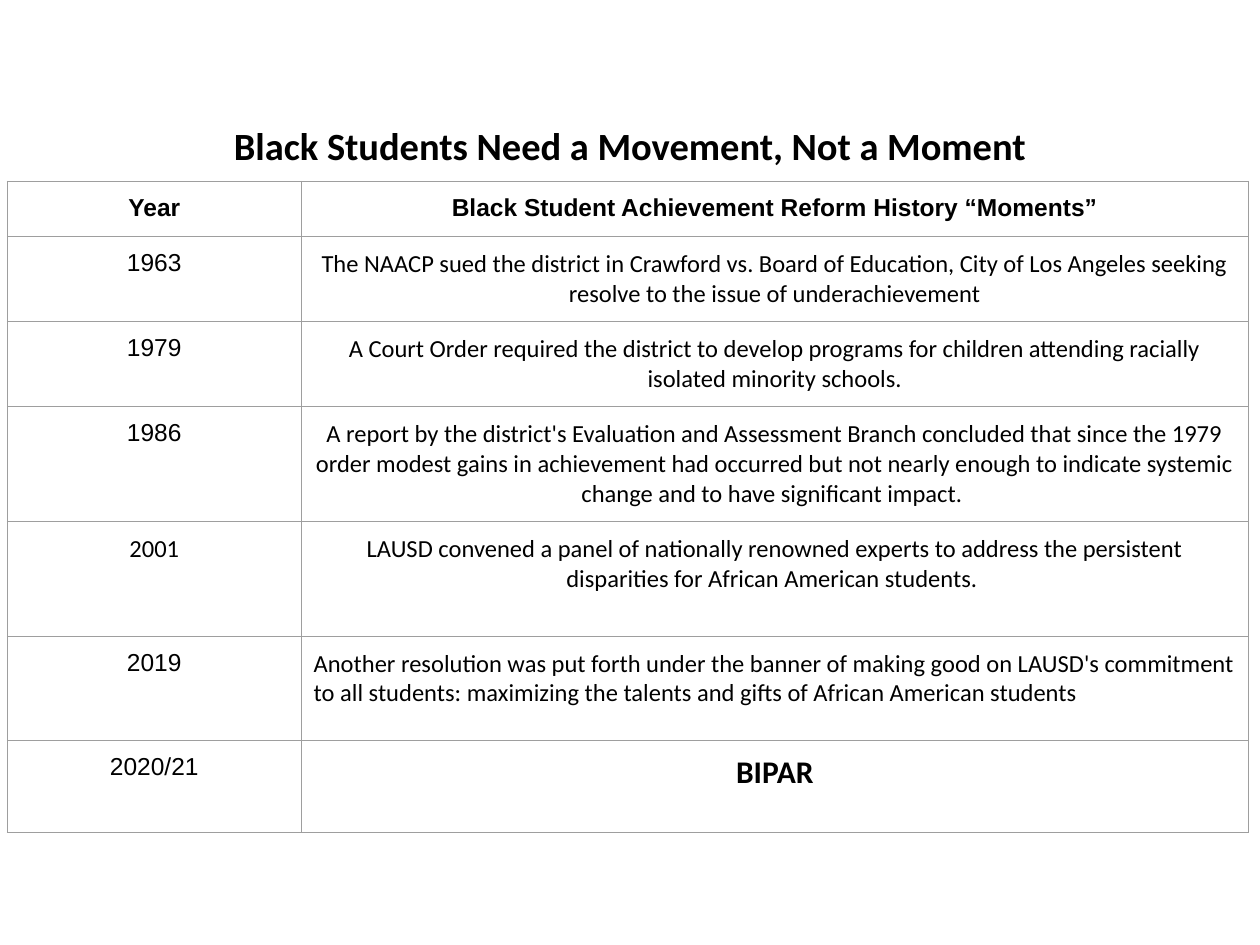
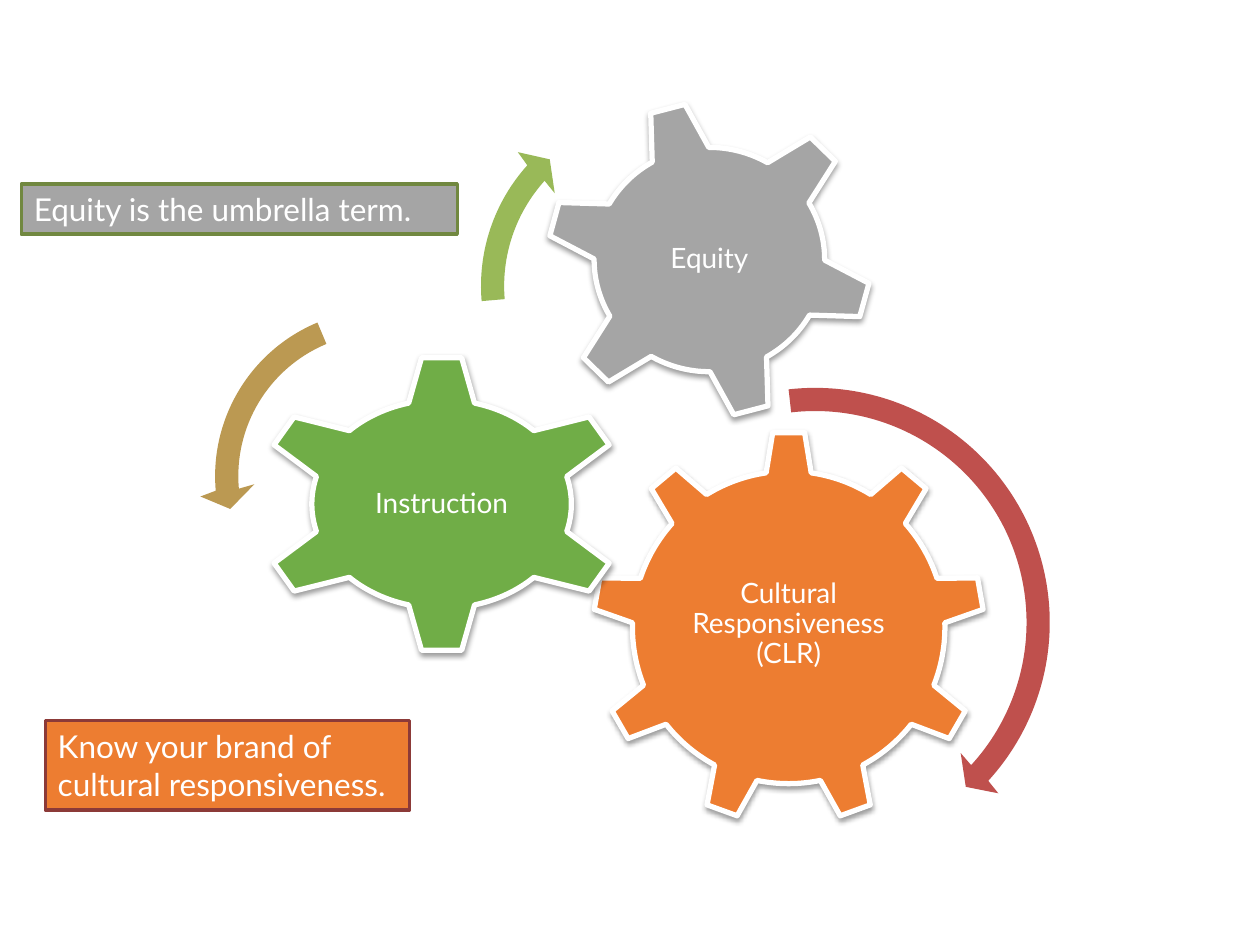
"""Build two slides: a table of reform moments and three linked gears."""
from math import cos, radians, sin, tan
from lxml.etree import SubElement as Sub
from pptx import Presentation as Deck
from pptx.dml.color import RGBColor as Rgb
from pptx.enum.shapes import MSO_SHAPE as Kind
from pptx.enum.text import MSO_ANCHOR as Anchor, PP_ALIGN as Align
from pptx.oxml.ns import qn
from pptx.util import Inches, Pt

HUES = {
    "black": "000000", "white": "FFFFFF", "rule": "9E9E9E", "gray": "A5A5A5",
    "orange": "ED7D31", "green": "70AD47", "red": "BF504D", "tan": "BB9952",
    "lime": "99B958", "moss": "718840", "wine": "8C3A38",
}
CELL = Inches(0.1)
COLS, ROWS = 100, 75


def write(frame, text, hue, size, face, bold=False, align=Align.CENTER,
          anchor=Anchor.TOP, pad=(1, 1), space=None):
    """Fill a text frame or table cell with one styled paragraph."""
    side, top = (round(n * CELL) for n in pad)
    cell = hasattr(frame, "text_frame")
    look = {"word_wrap": True, "margin_left": side, "margin_right": side,
            "margin_top": top, "margin_bottom": top, "vertical_anchor": anchor}
    for key, val in look.items():
        if not (cell and key == "word_wrap"):
            setattr(frame, key, val)
    body = frame.text_frame if cell else frame
    para = body.paragraphs[0]
    for key, val in {"alignment": align, "line_spacing": space}.items():
        setattr(para, key, val)
    run = para.add_run()
    run.text = text
    for key, val in {"size": Pt(size), "name": face, "bold": bold}.items():
        setattr(run.font, key, val)
    run.font.color.rgb = Rgb.from_string(HUES[hue])


def trace(slide, mid, trail, hue):
    """Draw an outline from (degrees, x radius, y radius, reached by an arc) points."""
    dots = [((mid[0] + rx * sin(radians(a))) * CELL,
             (mid[1] - ry * cos(radians(a))) * CELL) for a, rx, ry, bend in trail]
    pen = slide.shapes.build_freeform(*dots[0], scale=1.0)
    pen.add_line_segments(dots[1:], close=True)
    form = pen.convert_to_shape()
    nodes = list(form._element.iter(qn("a:lnTo")))
    for i, node in enumerate(nodes):
        a, b = trail[i][0], trail[i + 1][0]
        rx, ry, bend = trail[i + 1][1:]
        if bend:
            node.tag = qn("a:cubicBezTo")
            pull = 4 / 3 * tan(radians(b - a) / 4) * CELL
            for (x, y), turn, k in ((dots[i], a, pull), (dots[i + 1], b, -pull)):
                Sub(node, qn("a:pt"),
                    x=str(round(x + k * rx * cos(radians(turn)) - form.left)),
                    y=str(round(y + k * ry * sin(radians(turn)) - form.top)))
            node.append(node[0])
    form.shadow.inherit = False
    form.fill.solid()
    form.fill.fore_color.rgb = Rgb.from_string(HUES[hue])
    form.line.fill.background()
    return form


deck = Deck()
deck.slide_width, deck.slide_height = COLS * CELL, ROWS * CELL
blank = deck.slide_layouts[6]

past = deck.slides.add_slide(blank)
MOMENTS = [
    ("Year", "Black Student Achievement Reform History “Moments”", 4.4),
    ("1963", "The NAACP sued the district in Crawford vs. Board of Education, City of Los Angeles "
     "seeking resolve to the issue of underachievement", 6.75),
    ("1979", "A Court Order required the district to develop programs for children attending "
     "racially isolated minority schools.", 6.75),
    ("1986", "A report by the district's Evaluation and Assessment Branch concluded that since the "
     "1979 order modest gains in achievement had occurred but not nearly enough to indicate "
     "systemic change and to have significant impact. ", 9.1),
    ("2001", "LAUSD convened a panel of nationally renowned experts to address the persistent "
     "disparities for African American students. ", 9.1),
    ("2019", "Another resolution was put forth under the banner of making good on LAUSD's "
     "commitment to all students: maximizing the talents and gifts of African American students", 8.3),
    ("2020/21", "BIPAR", 7.3),
]
wide = (23.3, 75.2)
high = [row[2] for row in MOMENTS]
spot = [round(n * CELL) for n in (0.6, 14.4, sum(wide), sum(high))]
grid = past.shapes.add_table(len(MOMENTS), len(wide), *spot).table
grid.first_row = grid.horz_banding = False
for col, span in zip(grid.columns, wide):
    col.width = round(span * CELL)
for r, (year, event, tall) in enumerate(MOMENTS):
    grid.rows[r].height = round(tall * CELL)
    for c, text in enumerate((year, event)):
        cell = grid.cell(r, c)
        plain = r == 0 or (c == 0 and year != "2001")
        final = text == "BIPAR"
        write(cell, text, "black", 18 if final else 14, "Arial" if plain else "Calibri",
              bold=r == 0 or final,
              align=Align.LEFT if c and year == "2019" else Align.CENTER)
        props = cell._tc.get_or_add_tcPr()
        for side in "LRTB":
            edge = Sub(props, qn(f"a:ln{side}"), w=str(Pt(0.75)))
            Sub(Sub(edge, qn("a:solidFill")), qn("a:srgbClr"), val=HUES["rule"])
        cell.fill.background()

spot = [round(n * CELL) for n in (0, 8.65, COLS, 5.7)]
title = past.shapes.add_textbox(*spot)
write(title.text_frame, "Black Students Need a Movement, Not a Moment", "black", 22, "Calibri", True)

wheel = deck.slides.add_slide(blank)
GEARS = [
    ("Cultural Responsiveness (CLR)", "orange", (62.6, 49.8), (12.4, 12.4), 9, 0, 8.3, 4.7, 1.25),
    ("Instruction", "green", (35.05, 40), (10.3, 8.28), 6, 0, 14.7, 6.3, 1.41),
    ("Equity", "gray", (56.3, 20.6), (9.15, 8.9), 6, -15, 14.7, 6.3, 1.4),
]
for text, hue, mid, (rx, ry), teeth, turn, base, tip, reach in GEARS:
    trail = []
    step = 360 / teeth
    for k in range(teeth):
        at = turn + k * step
        tooth = [(at - tip, reach, False), (at + tip, reach, False),
                 (at + base, 1, False), (at + step - base, 1, True)]
        trail += [(a, rx * n, ry * n, bend) for a, n, bend in tooth]
    gear = trace(wheel, mid, trail, hue)
    gear.line.color.rgb = Rgb.from_string(HUES["white"])
    gear.line.width = Pt(3)
    glow = Sub(gear._element.spPr.find(qn("a:effectLst")), qn("a:outerShdw"),
               blurRad=str(Pt(3.1)), dist=str(Pt(1.6)), dir="5400000", rotWithShape="0")
    Sub(Sub(glow, qn("a:srgbClr"), val=HUES["black"]), qn("a:alpha"), val="38000")
    write(gear.text_frame, text, "white", 16, "Lato", anchor=Anchor.MIDDLE, pad=(6, 6), space=0.9)

ARROWS = [
    ("red", (64.7, 49.4), 17.7, -6.5, 132.45, 137.5, 0.55, 3),
    ("tan", (30.3, 37.8), 12.3, -22.7, -95, -102.2, -1.4, 1),
    ("lime", (52.5, 22.7), 13.4, -94.8, -48, -41.4, 1, 1),
]
band, barb = 0.92, 2.18
for hue, mid, rad, start, neck, tip, lean, parts in ARROWS:
    arc = [start + (neck - start) * i / parts for i in range(parts + 1)]
    trail = [(a, rad + band, i > 0) for i, a in enumerate(arc)]
    trail += [(neck + lean, rad + barb, False), (tip, rad, False), (neck - lean, rad - barb, False)]
    trail += [(a, rad - band, i > 0) for i, a in enumerate(reversed(arc))]
    trace(wheel, mid, [(a, n, n, bend) for a, n, bend in trail], hue)

NOTES = [
    ("Equity is the umbrella term.", "gray", "moss", (1.7, 14.6, 34.6, 4)),
    ("Know your brand of cultural responsiveness.", "orange", "wine", (3.6, 57.2, 28.9, 7.1)),
]
for text, hue, rim, area in NOTES:
    note = wheel.shapes.add_shape(Kind.RECTANGLE, *(round(n * CELL) for n in area))
    note.shadow.inherit = False
    note.fill.solid()
    note.fill.fore_color.rgb = Rgb.from_string(HUES[hue])
    note.line.color.rgb = Rgb.from_string(HUES[rim])
    note.line.width = Pt(2)
    write(note.text_frame, text, "white", 18, "Lato", align=Align.LEFT, pad=(1, 0.5))

deck.save("out.pptx")
